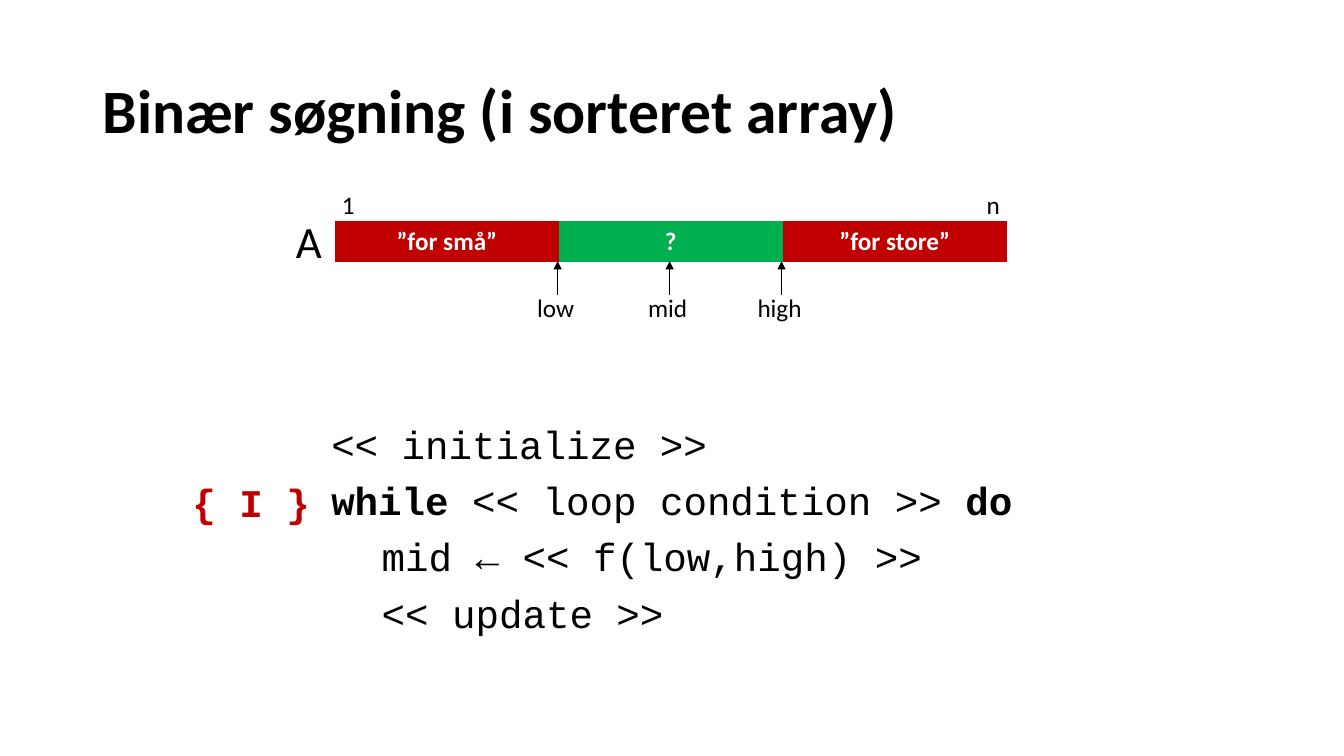
from collections import namedtuple

from lxml.etree import SubElement
from pptx import Presentation
from pptx.dml.color import RGBColor
from pptx.enum.shapes import MSO_CONNECTOR as Connector
from pptx.enum.text import MSO_ANCHOR as Anchor, MSO_AUTO_SIZE as AutoSize, PP_ALIGN as Align
from pptx.oxml.ns import qn
from pptx.util import Cm, Pt

COLORS = {"text": "000000", "white": "FFFFFF", "rejected": "C00000", "open": "00B050"}
BODY_FONT = "Calibri"
CODE_FONT = "Courier New"
LABEL_WIDTH = 3.43
LABEL_HEIGHT = 1.02

Box = namedtuple("Box", "left top width height")

SEGMENTS = [("”for små”", "rejected"), ("?", "open"), ("”for store”", "rejected")]
POINTERS = [("low", 1), ("mid", 1.5), ("high", 2)]
CODE = [
    [("<< initialize >>", False)],
    [("while", True), (" << loop condition >> ", False), ("do", True)],
    [("\tmid ← << f(low,high) >>", False)],
    [("\t<< update >>", False)],
]


def rgb(name):
    return RGBColor.from_string(COLORS[name])


def format_span(span, size, color="text", bold=False, font=BODY_FONT):
    span.font.name = font
    span.font.size = Pt(size)
    span.font.bold = bold
    span.font.color.rgb = rgb(color)


def add_text_box(page, box):
    shape = page.shapes.add_textbox(*(Cm(length) for length in box))
    shape.text_frame.word_wrap = True
    return shape.text_frame


def add_label(page, box, text, size=18, align=Align.CENTER, **style):
    para = add_text_box(page, box).paragraphs[0]
    para.text = text
    para.alignment = align
    format_span(para.runs[0], size, **style)


def add_centered_label(page, center, top, text):
    box = Box(center - LABEL_WIDTH / 2, top, LABEL_WIDTH, LABEL_HEIGHT)
    add_label(page, box, text)


def add_arrow(page, x, start, end):
    arrow = page.shapes.add_connector(Connector.STRAIGHT, Cm(x), Cm(start), Cm(x), Cm(end))
    arrow.line.color.rgb = rgb("text")
    arrow.line.width = Pt(0.5)
    SubElement(arrow.line._get_or_add_ln(), qn("a:tailEnd"), type="triangle")
    SubElement(arrow._element.spPr, qn("a:effectLst"))


def add_title(page, box):
    title = page.shapes.title
    title.left, title.top, title.width, title.height = (Cm(length) for length in box)
    frame = title.text_frame
    frame.text = "Binær søgning (i sorteret array)"
    frame.auto_size = AutoSize.NONE
    frame.vertical_anchor = Anchor.MIDDLE
    para = frame.paragraphs[0]
    para.alignment = Align.LEFT
    para.line_spacing = 0.9
    format_span(para.runs[0], 44, bold=True)


def format_segment(cell, text, color):
    properties = cell._tc.get_or_add_tcPr()
    for side in ("lnL", "lnR", "lnT", "lnB"):
        SubElement(SubElement(properties, qn(f"a:{side}")), qn("a:noFill"))
    cell.fill.solid()
    cell.fill.fore_color.rgb = rgb(color)
    cell.text = text
    para = cell.text_frame.paragraphs[0]
    para.alignment = Align.CENTER
    format_span(para.runs[0], 18, "white", bold=True)


def add_array(page, box):
    lengths = (Cm(length) for length in box)
    table = page.shapes.add_table(1, len(SEGMENTS), *lengths).table
    table.first_row = table.horz_banding = False
    for cell, (text, color) in zip(table.rows[0].cells, SEGMENTS):
        format_segment(cell, text, color)

    bottom = box.top + box.height
    for name, position in POINTERS:
        x = box.left + position * box.width / len(SEGMENTS)
        add_arrow(page, x - 0.03, bottom + 0.84, bottom - 0.02)
        add_centered_label(page, x - 0.08, bottom + 0.64, name)

    index_top = box.top - 0.93
    add_centered_label(page, box.left + 0.34, index_top, "1")
    add_centered_label(page, box.left + box.width - 0.34, index_top, "n")
    name_box = Box(box.left - 2.87, box.top - 0.3, 2.79, 1.63)
    add_label(page, name_box, "A", 32, Align.RIGHT)


def add_code(page, box):
    frame = add_text_box(page, box)
    for index, line in enumerate(CODE):
        para = frame.add_paragraph() if index else frame.paragraphs[0]
        para.line_spacing = 0.9
        para.space_before = Pt(10)
        for text, bold in line:
            span = para.add_run()
            span.text = text
            format_span(span, 28, bold=bold, font=CODE_FONT)
    invariant_box = Box(box.left - 3.5, box.top + 1.35, 4.72, 1.45)
    add_label(page, invariant_box, "{ I }", 28, Align.LEFT,
              color="rejected", bold=True, font=CODE_FONT)


def main():
    deck = Presentation()
    deck.slide_width, deck.slide_height = Cm(33.87), Cm(19.05)
    page = deck.slides.add_slide(deck.slide_layouts[5])
    add_title(page, Box(2.33, 1.01, 29.21, 3.68))
    add_array(page, Box(8.44, 5.57, 16.93, 1.03))
    add_code(page, Box(8.1, 10.59, 18.44, 6.76))
    deck.save("out.pptx")


if __name__ == "__main__":
    main()
